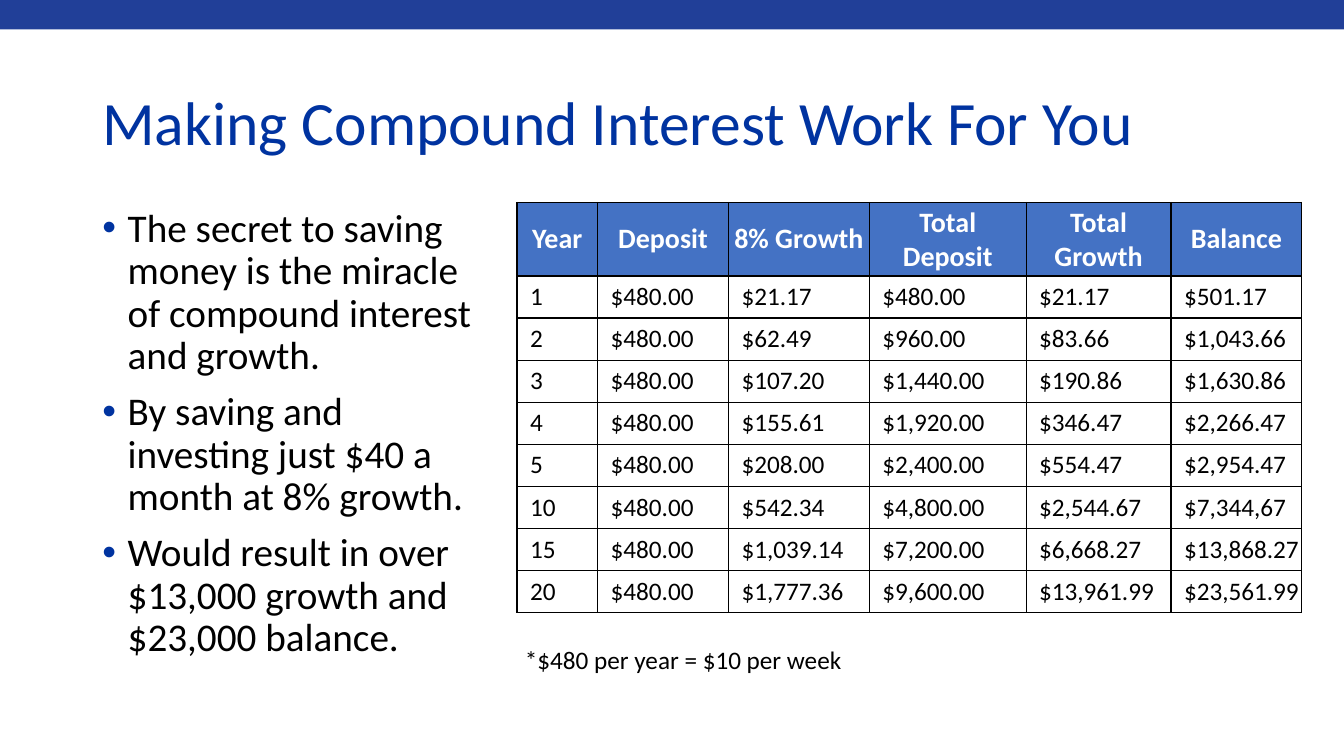
"""Build the compound interest slide."""
import lxml.etree
import pptx
import pptx.dml.color
import pptx.enum.shapes
import pptx.enum.text
import pptx.oxml
import pptx.oxml.ns
import pptx.util

Cm = pptx.util.Cm
RGBColor = pptx.dml.color.RGBColor
ALIGN = pptx.enum.text.PP_ALIGN
ANCHOR = pptx.enum.text.MSO_ANCHOR

BAR_BLUE = RGBColor(0x21, 0x3F, 0x98)
TITLE_BLUE = RGBColor(0x00, 0x33, 0xA0)
HEADER_BLUE = RGBColor(0x44, 0x72, 0xC4)
BLACK = RGBColor(0, 0, 0)
WHITE = RGBColor(255, 255, 255)
FONT = "Calibri"

POINTS = [
    "The secret to saving money is the miracle of compound interest and growth.",
    "By saving and investing just $40 a month at 8% growth.",
    "Would result in over $13,000 growth and $23,000 balance.",
]
COLUMNS = {
    "Year": 2.03,
    "Deposit": 3.3,
    "8% Growth": 3.55,
    "Total Deposit": 3.95,
    "Total Growth": 3.65,
    "Balance": 3.3,
}
SAVINGS = [
    ("1", "$480.00", "$21.17", "$480.00", "$21.17", "$501.17"),
    ("2", "$480.00", "$62.49", "$960.00", "$83.66", "$1,043.66"),
    ("3", "$480.00", "$107.20", "$1,440.00", "$190.86", "$1,630.86"),
    ("4", "$480.00", "$155.61", "$1,920.00", "$346.47", "$2,266.47"),
    ("5", "$480.00", "$208.00", "$2,400.00", "$554.47", "$2,954.47"),
    ("10", "$480.00", "$542.34", "$4,800.00", "$2,544.67", "$7,344,67"),
    ("15", "$480.00", "$1,039.14", "$7,200.00", "$6,668.27", "$13,868.27"),
    ("20", "$480.00", "$1,777.36", "$9,600.00", "$13,961.99", "$23,561.99"),
]
HEADER_HEIGHT = 1.84
ROW_HEIGHT = 1.06
CELL_MARGIN = 0.08


def write(para, text, size=18, color=BLACK, bold=False, align=ALIGN.LEFT,
          line=1.0, before=0, left=0, hanging=0):
    """Put formatted text into a paragraph."""
    para.alignment = align
    para.line_spacing = line
    para.space_before = pptx.util.Pt(before)
    properties = para._p.get_or_add_pPr()
    properties.set("marL", str(Cm(left)))
    properties.set("indent", str(-Cm(hanging)))
    span = para.add_run()
    span.text = text
    span.font.name = FONT
    span.font.size = pptx.util.Pt(size)
    span.font.bold = bold
    span.font.color.rgb = color


def add_bullet(para, color):
    """Give a paragraph a coloured round bullet."""
    properties = para._p.get_or_add_pPr()
    bullet_color = pptx.oxml.parse_xml(
        f'<a:buClr {pptx.oxml.ns.nsdecls("a")}><a:srgbClr val="{color}"/></a:buClr>')
    properties.append(bullet_color)
    for tag, attribute, value in (("a:buFont", "typeface", "Arial"),
                                  ("a:buChar", "char", "•")):
        lxml.etree.SubElement(properties, pptx.oxml.ns.qn(tag)).set(attribute, value)


def add_borders(cell):
    """Draw one-point black lines on the four sides of a cell."""
    properties = cell._tc.get_or_add_tcPr()
    for place, side in enumerate("LRTB"):
        properties.insert(place, pptx.oxml.parse_xml(
            f'<a:ln{side} {pptx.oxml.ns.nsdecls("a")} w="12700"><a:solidFill>'
            f'<a:srgbClr val="{BLACK}"/></a:solidFill></a:ln{side}>'))


def text_frame(page, box, anchor=ANCHOR.TOP):
    """Add a wrapping text box and return its text frame."""
    frame = page.shapes.add_textbox(*map(Cm, box)).text_frame
    frame.word_wrap = True
    frame.vertical_anchor = anchor
    return frame


def draw_bar(page, box):
    """Draw the band along the top edge."""
    bar = page.shapes.add_shape(pptx.enum.shapes.MSO_SHAPE.RECTANGLE, *map(Cm, box))
    bar.shadow.inherit = False
    bar.fill.solid()
    bar.fill.fore_color.rgb = BAR_BLUE
    bar.line.fill.background()


def draw_title(page, box):
    """Write the slide title."""
    frame = text_frame(page, box, ANCHOR.MIDDLE)
    write(frame.paragraphs[0], "Making Compound Interest Work For You",
          size=44, color=TITLE_BLUE, line=0.9)


def draw_points(page, box):
    """Write the bulleted points."""
    frame = text_frame(page, box)
    for index, point in enumerate(POINTS):
        para = frame.add_paragraph() if index else frame.paragraphs[0]
        write(para, point, size=28, line=0.9, before=10, left=0.64, hanging=0.64)
        add_bullet(para, TITLE_BLUE)


def draw_savings(page, box):
    """Draw the table of yearly savings."""
    rows = [tuple(COLUMNS), *SAVINGS]
    table = page.shapes.add_table(len(rows), len(COLUMNS), *map(Cm, box)).table
    table.horz_banding = False
    for column, width in zip(table.columns, COLUMNS.values()):
        column.width = Cm(width)
    for row_index, values in enumerate(rows):
        header = row_index == 0
        table.rows[row_index].height = Cm(HEADER_HEIGHT if header else ROW_HEIGHT)
        for column_index, value in enumerate(values):
            cell = table.cell(row_index, column_index)
            cell.margin_left = cell.margin_top = cell.margin_bottom = Cm(CELL_MARGIN)
            cell.margin_right = Cm(CELL_MARGIN if header else 0)
            cell.vertical_anchor = ANCHOR.MIDDLE
            cell.fill.solid()
            cell.fill.fore_color.rgb = HEADER_BLUE if header else WHITE
            add_borders(cell)
            para = cell.text_frame.paragraphs[0]
            if header:
                write(para, value, size=20, color=WHITE, bold=True, align=ALIGN.CENTER)
            else:
                write(para, value, left=0.25)


def draw_note(page, box):
    """Write the note below the table."""
    write(text_frame(page, box).paragraphs[0], "*$480 per year = $10 per week")


def main():
    """Build and save the deck."""
    deck = pptx.Presentation()
    deck.slide_width, deck.slide_height = Cm(33.87), Cm(19.05)
    page = deck.slides.add_slide(deck.slide_layouts[6])
    draw_bar(page, (0, -0.05, 33.87, 0.79))
    draw_title(page, (2.33, 1.96, 29.21, 2.41))
    draw_points(page, (2.33, 5.13, 10.11, 13.51))
    draw_savings(page, (13.03, 5.1, sum(COLUMNS.values()),
                        HEADER_HEIGHT + ROW_HEIGHT * len(SAVINGS)))
    draw_note(page, (12.98, 16.1, 9.4, 1.02))
    deck.save("out.pptx")


if __name__ == "__main__":
    main()
